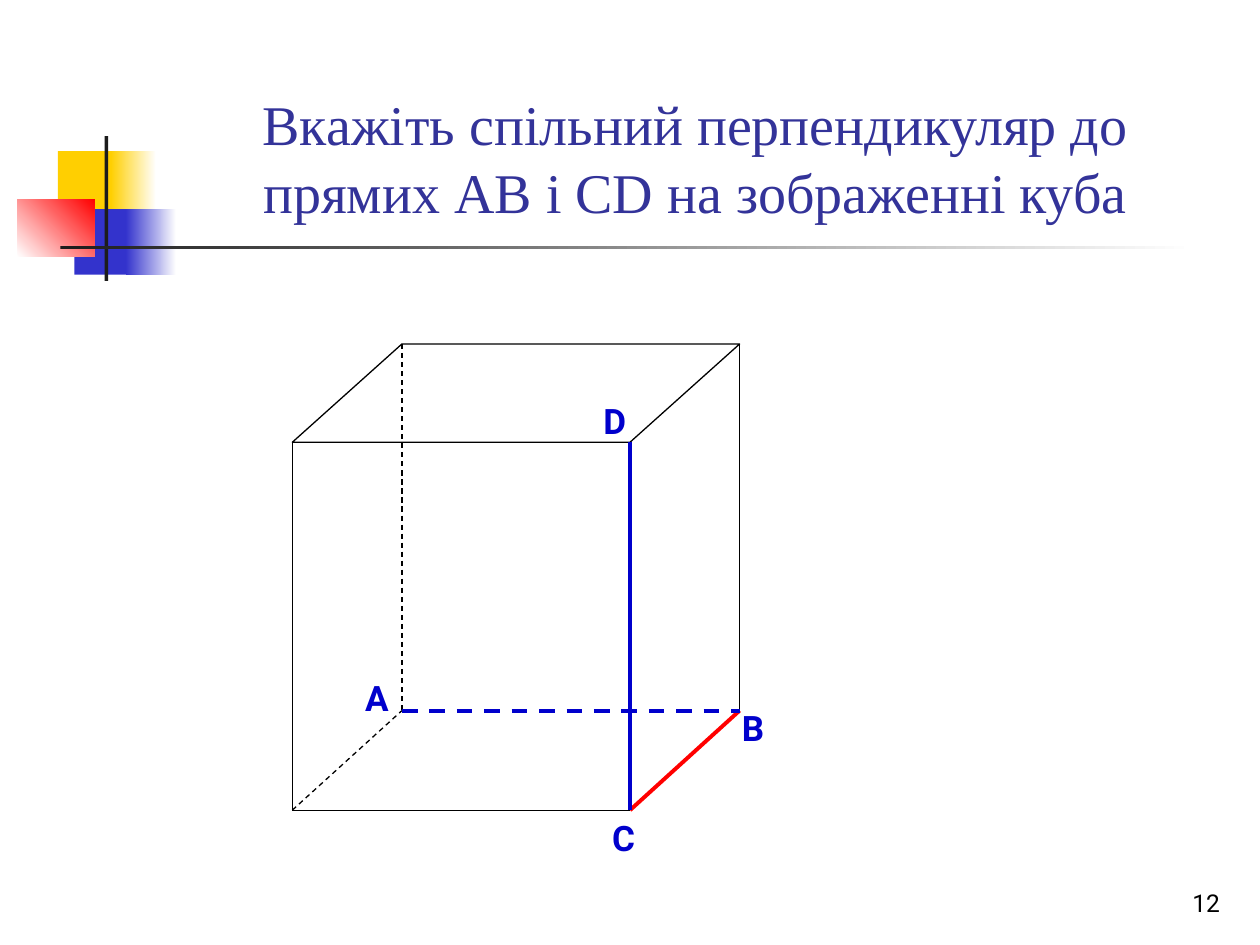
import pptx
import pptx.util
import pptx.dml.color
import pptx.enum.dml
import pptx.enum.shapes
import pptx.enum.text
import pptx.oxml.ns
import lxml.etree

Inches, Pt = pptx.util.Inches, pptx.util.Pt
RGBColor = pptx.dml.color.RGBColor
MSO_SHAPE = pptx.enum.shapes.MSO_SHAPE
DASH = pptx.enum.dml.MSO_LINE.DASH
PP_ALIGN = pptx.enum.text.PP_ALIGN
ANCHOR = pptx.enum.text.MSO_ANCHOR

BLACK = RGBColor(0x00, 0x00, 0x00)
WHITE = RGBColor(0xFF, 0xFF, 0xFF)
YELLOW = RGBColor(0xFF, 0xCF, 0x01)
INDIGO = RGBColor(0x33, 0x33, 0xCC)
RED = RGBColor(0xFF, 0x00, 0x00)
CHARCOAL = RGBColor(0x1C, 0x1C, 0x1C)
TITLE_BLUE = RGBColor(0x33, 0x33, 0x99)
BLUE = RGBColor(0x00, 0x00, 0xCC)

# Content
TITLE = "Вкажіть спільний перпендикуляр до прямих АВ і СD на зображенні куба"
PAGE = "12"

# Corner ornament: left, top, width, height, colours, gradient angle
ORNAMENT = [
    (0.46, 1.2, 0.48, 0.52, [YELLOW], 0),
    (0.88, 1.2, 0.36, 0.52, [YELLOW, WHITE], 0),
    (0.59, 1.66, 0.46, 0.52, [INDIGO], 0),
    (1, 1.66, 0.4, 0.52, [INDIGO, WHITE], 0),
    (0.14, 1.58, 0.61, 0.46, [WHITE, RED], 45),
    (0.83, 1.08, 0.03, 1.15, [CHARCOAL], 0),
    (0.48, 1.95, 9, 0.03, [CHARCOAL, WHITE], 0),
]

# Cube: front face and back face share these coordinates
FRONT_LEFT, FRONT_RIGHT, FRONT_TOP, FRONT_BOTTOM = 2.32, 5, 3.51, 6.43
BACK_LEFT, BACK_RIGHT, BACK_TOP, BACK_BOTTOM = 3.19, 5.87, 2.73, 5.64
A = (BACK_LEFT, BACK_BOTTOM)
B = (BACK_RIGHT, BACK_BOTTOM)
C = (FRONT_RIGHT, FRONT_BOTTOM)
D = (FRONT_RIGHT, FRONT_TOP)
CORNER = (FRONT_LEFT, FRONT_BOTTOM)

# Edges: start, end, colour, width, dashed
EDGES = [
    ((BACK_RIGHT, BACK_TOP), B, BLACK, 0.75, False),
    (C, B, RED, 2.25, False),
    ((BACK_LEFT, BACK_TOP), A, BLACK, 0.75, True),
    (CORNER, A, BLACK, 0.75, True),
    (A, B, BLUE, 2.25, True),
    ((FRONT_LEFT, FRONT_TOP), CORNER, BLACK, 0.75, False),
    (CORNER, C, BLACK, 0.75, False),
    (D, C, BLUE, 2.25, False),
]

# Vertex labels: text, left, top, width
LABELS = [("B", 5.79, 5.56, 0.39), ("D", 4.69, 3.12, 0.39),
          ("A", 2.8, 5.32, 0.32), ("C", 4.76, 6.43, 0.47)]

TITLE_FONT = {"name": "Times New Roman", "size": Pt(32)}
PAGE_FONT = {"name": "Roboto", "size": Pt(14)}
LABEL_FONT = {"name": "Roboto", "size": Pt(20), "bold": True}


def add_shape(s, kind, box):
    sp = s.shapes.add_shape(kind, *map(Inches, box))
    sp.shadow.inherit = False
    return sp


def add_text(s, text, box, font, color, align=PP_ALIGN.LEFT, anchor=ANCHOR.TOP):
    tf = s.shapes.add_textbox(*map(Inches, box)).text_frame
    tf.word_wrap = True
    tf.vertical_anchor = anchor
    p = tf.paragraphs[0]
    p.alignment = align
    r = p.add_run()
    r.text = text
    for name, value in font.items():
        setattr(r.font, name, value)
    r.font.color.rgb = color


def add_edge(s, start, end, color, width, dashed):
    points = map(Inches, start + end)
    sp = s.shapes.add_connector(pptx.enum.shapes.MSO_CONNECTOR.STRAIGHT, *points)
    sp.line.color.rgb = color
    sp.line.width = Pt(width)
    if dashed:
        sp.line.dash_style = DASH.DASH
    lxml.etree.SubElement(sp._element.spPr, pptx.oxml.ns.qn("a:effectLst"))


def main():
    prs = pptx.Presentation()
    prs.slide_width, prs.slide_height = Inches(10), Inches(7.5)
    s = prs.slides.add_slide(prs.slide_layouts[6])

    # Ornament and rule
    for *box, colors, angle in ORNAMENT:
        sp = add_shape(s, MSO_SHAPE.RECTANGLE, box)
        sp.line.fill.background()
        if len(colors) == 1:
            sp.fill.solid()
            sp.fill.fore_color.rgb = colors[0]
        else:
            sp.fill.gradient()
            sp.fill.gradient_angle = angle
            for stop, position, color in zip(sp.fill.gradient_stops, (0, 1), colors):
                stop.position = position
                stop.color.rgb = color

    # Page number and title
    add_text(s, PAGE, (7.7, 6.83, 2.08, 0.5), PAGE_FONT, BLACK,
             PP_ALIGN.RIGHT, ANCHOR.BOTTOM)
    add_text(s, TITLE, (1.26, 0.23, 8.52, 1.6), TITLE_FONT, TITLE_BLUE,
             PP_ALIGN.CENTER, ANCHOR.BOTTOM)

    # Top face of the cube
    depth = FRONT_TOP - BACK_TOP
    top = add_shape(s, MSO_SHAPE.PARALLELOGRAM,
                    (FRONT_LEFT, BACK_TOP, BACK_RIGHT - FRONT_LEFT, depth))
    top.adjustments[0] = (BACK_LEFT - FRONT_LEFT) / depth
    top.fill.background()
    top.line.color.rgb = BLACK
    top.line.width = Pt(0.75)

    # Edges and vertex labels
    for edge in EDGES:
        add_edge(s, *edge)
    for text, left, y, width in LABELS:
        add_text(s, text, (left, y, width, 0.43), LABEL_FONT, BLUE)

    prs.save("out.pptx")


if __name__ == "__main__":
    main()
